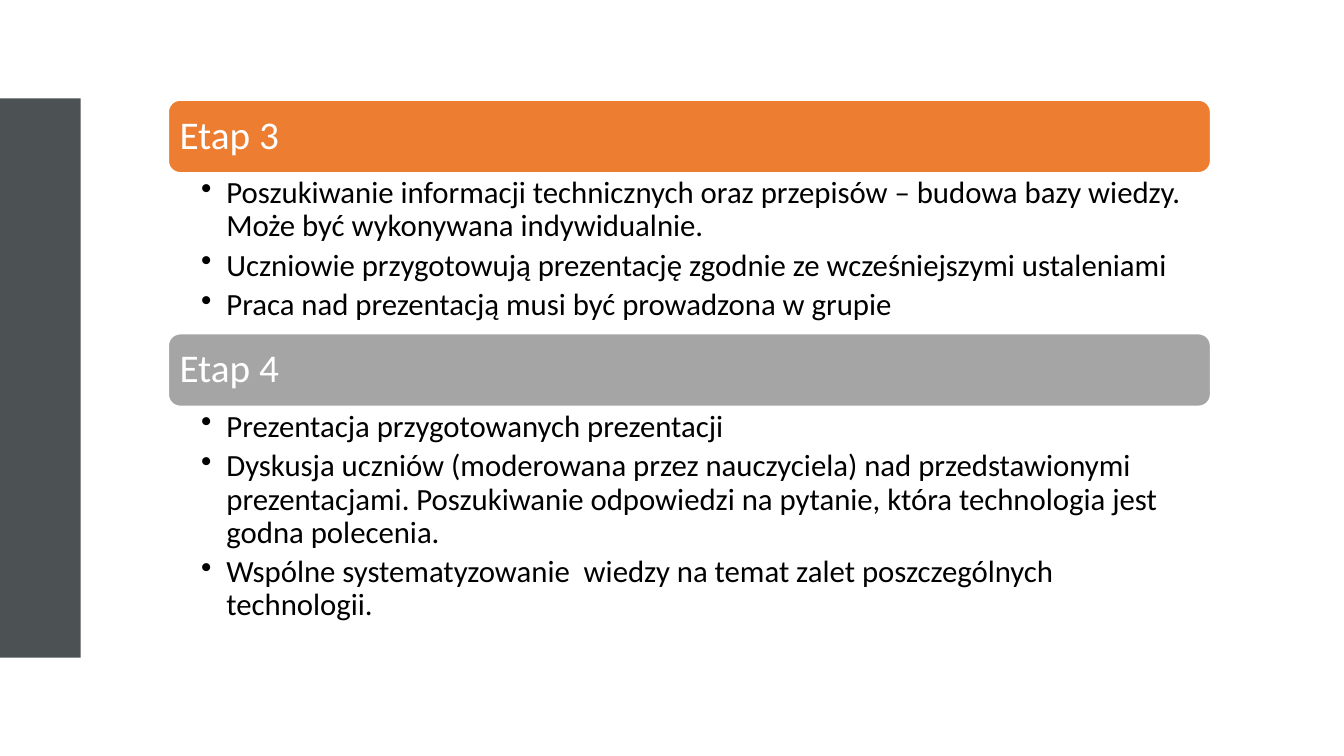
import pptx
import pptx.dml.color
import pptx.enum.shapes
import pptx.enum.text
import pptx.util
from lxml import etree

RGB = pptx.dml.color.RGBColor
KIND = pptx.enum.shapes.MSO_SHAPE
ANCHOR = pptx.enum.text.MSO_ANCHOR
ALIGN = pptx.enum.text.PP_ALIGN
Inches = pptx.util.Inches
Pt = pptx.util.Pt

SLATE = RGB(0x4C, 0x52, 0x54)
ORANGE = RGB(0xED, 0x7D, 0x31)
GREY = RGB(0xA5, 0xA5, 0xA5)
WHITE = RGB(0xFF, 0xFF, 0xFF)
BLACK = RGB(0, 0, 0)

WIDTH, HEIGHT = Inches(13.33), Inches(7.5)
LEFT, SPAN = 0.125, 0.776  # shares of the slide's width
TOP, HEAD = 0.132, 0.097  # shares of the slide's height

# title, colour, share of the height for the list, points
STAGES = [
    ("Etap 3", ORANGE, 0.212, [
        "Poszukiwanie informacji technicznych oraz przepisów – budowa bazy wiedzy. "
        "Może być wykonywana indywidualnie.",
        "Uczniowie przygotowują prezentację zgodnie ze wcześniejszymi ustaleniami",
        "Praca nad prezentacją musi być prowadzona w grupie",
    ]),
    ("Etap 4", GREY, 0.304, [
        "Prezentacja przygotowanych prezentacji",
        "Dyskusja uczniów (moderowana przez nauczyciela) nad przedstawionymi "
        "prezentacjami. Poszukiwanie odpowiedzi na pytanie, która technologia "
        "jest godna polecenia.",
        "Wspólne systematyzowanie  wiedzy na temat zalet poszczególnych technologii.",
    ]),
]


def place(x, y, w, h):
    """Turn shares of the slide into lengths."""
    return int(x * WIDTH), int(y * HEIGHT), int(w * WIDTH), int(h * HEIGHT)


def add_box(slide, kind, area, fill):
    box = slide.shapes.add_shape(kind, *place(*area))
    box.shadow.inherit = False
    box.fill.solid()
    box.fill.fore_color.rgb = fill
    box.line.fill.background()
    return box


def set_frame(frame, left, top, right, bottom):
    frame.word_wrap = True
    frame.margin_left, frame.margin_top = Inches(left), Inches(top)
    frame.margin_right, frame.margin_bottom = Inches(right), Inches(bottom)


def style(para, size, color):
    para.alignment = ALIGN.LEFT
    para.line_spacing = 0.9
    for run in para.runs:
        run.font.name = "Calibri"
        run.font.size = Pt(size)
        run.font.color.rgb = color


def add_bullet(para):
    props = para._p.get_or_add_pPr()
    props.set("marL", str(Inches(0.25)))
    props.set("indent", str(-Inches(0.25)))
    mark = etree.SubElement(props, pptx.oxml.ns.qn("a:buChar"))
    mark.set("char", "•")


def add_head(slide, y, title, fill):
    bar = add_box(slide, KIND.ROUNDED_RECTANGLE, (LEFT, y, SPAN, HEAD), fill)
    bar.line.color.rgb = WHITE
    bar.line.width = Pt(1.5)
    frame = bar.text_frame
    # The rounded corners add a little to the left inset.
    set_frame(frame, 0.08, 0.08, 0.08, 0.08)
    frame.vertical_anchor = ANCHOR.MIDDLE
    frame.text = title
    style(frame.paragraphs[0], 28, WHITE)


def add_list(slide, y, h, points):
    frame = slide.shapes.add_textbox(*place(LEFT, y, SPAN, h)).text_frame
    set_frame(frame, 0.33, 0.04, 0.22, 0.04)
    frame.text = "\n".join(points)
    for para in frame.paragraphs:
        style(para, 22, BLACK)
        para.space_after = Pt(4.4)
        add_bullet(para)


def main():
    deck = pptx.Presentation()
    deck.slide_width, deck.slide_height = WIDTH, HEIGHT
    slide = deck.slides.add_slide(deck.slide_layouts[6])
    add_box(slide, KIND.RECTANGLE, (0, 0.13, 0.06, 0.74), SLATE)
    y = TOP
    for title, fill, h, points in STAGES:
        add_head(slide, y, title, fill)
        add_list(slide, y + HEAD, h, points)
        y += HEAD + h
    deck.save("out.pptx")


if __name__ == "__main__":
    main()
